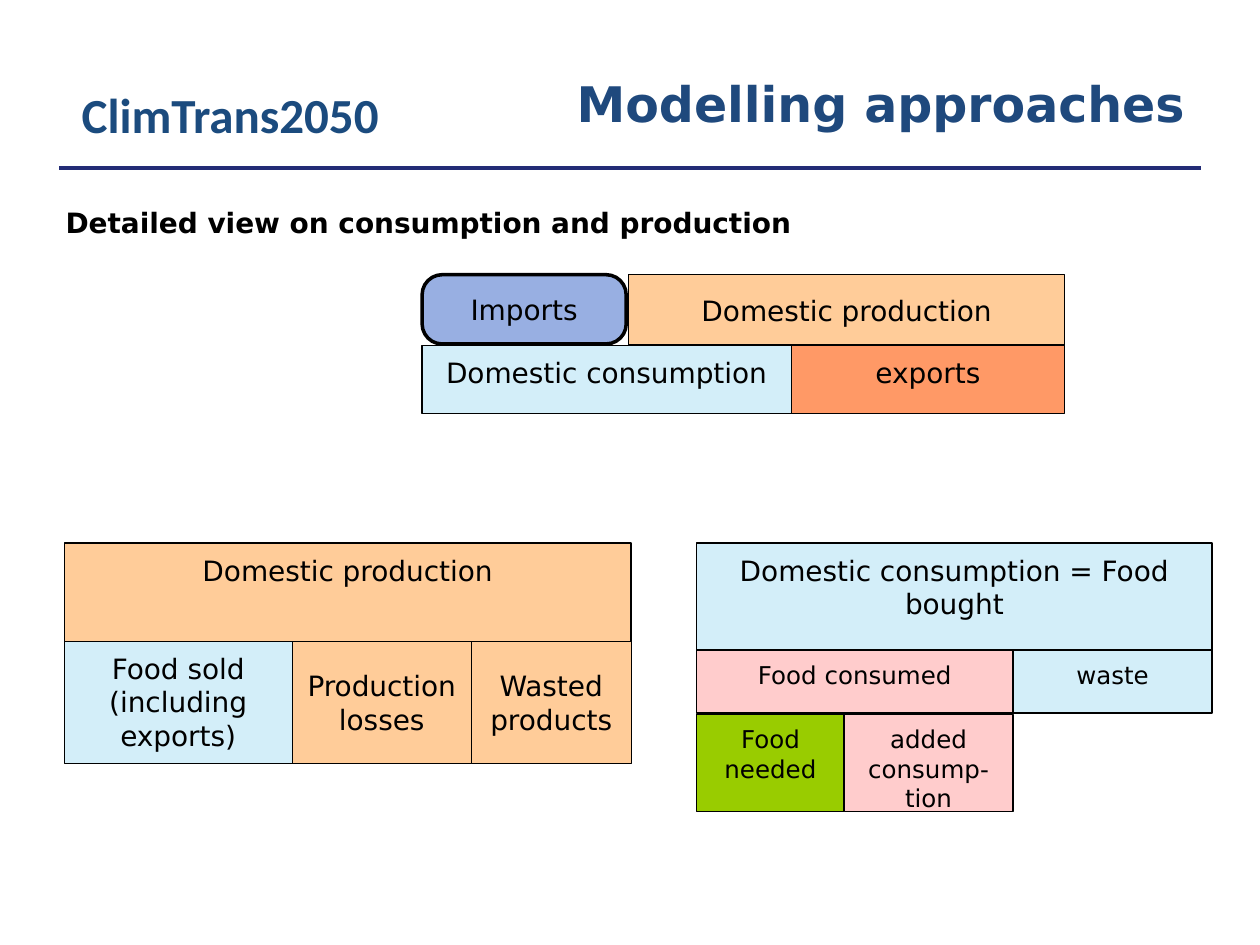
from lxml.etree import SubElement
from pptx import Presentation
from pptx.dml.color import RGBColor
from pptx.enum.shapes import MSO_CONNECTOR, MSO_SHAPE
from pptx.enum.text import MSO_ANCHOR, MSO_AUTO_SIZE, PP_ALIGN
from pptx.oxml.ns import qn
from pptx.util import Inches, Pt

SANS = "DejaVu Sans"
BLUE, PEACH, PINK = "D3EEF9", "FFCC99", "FFCCCC"
TOP, MID = MSO_ANCHOR.TOP, MSO_ANCHOR.MIDDLE


def color(code):
    """Turn a hex string into a colour."""
    return RGBColor.from_string(code)


def place(shape, left, top, width, height):
    """Move and size a shape, in inches."""
    shape.left, shape.top = Inches(left), Inches(top)
    shape.width, shape.height = Inches(width), Inches(height)


def write(shape, text, size, ink="000000", bold=False, face=SANS, align=None):
    """Set one formatted paragraph and return it."""
    shape.text_frame.text = text
    para = shape.text_frame.paragraphs[0]
    para.alignment = align
    font = para.runs[0].font
    font.name, font.size, font.bold = face, Pt(size), bold
    font.color.rgb = color(ink)
    return para


def block(shapes, text, box, fill, size=16, anchor=TOP, kind=MSO_SHAPE.RECTANGLE):
    """Add a filled, outlined block with centred text."""
    shape = shapes.add_shape(kind, *map(Inches, box))
    shape.shadow.inherit = False
    shape.fill.solid()
    shape.fill.fore_color.rgb = color(fill)
    shape.line.color.rgb = color("000000")
    shape.line.width = Pt(0.75)
    frame = shape.text_frame
    frame.word_wrap, frame.vertical_anchor = True, anchor
    frame.margin_left = frame.margin_right = Inches(0.1)
    frame.margin_top = frame.margin_bottom = Inches(0.08)
    write(shape, text, size, align=PP_ALIGN.CENTER).space_after = Pt(10)
    return shape


def row(shapes, left, top, height, cells, size=16):
    """Lay blocks side by side from (text, width, fill, anchor) cells."""
    for text, width, fill, anchor in cells:
        block(shapes, text, (left, top, width, height), fill, size, anchor)
        left += width


def header(slide, left, top, width):
    """Place the title, the project name and the rule beneath them."""
    rule = slide.shapes.add_connector(
        MSO_CONNECTOR.STRAIGHT, *map(Inches, (left, top, left + width, top)))
    rule.line.color.rgb = color("232C76")
    rule.line.width = Pt(2.25)
    SubElement(rule._element.spPr, qn("a:effectLst"))
    name = slide.shapes.add_textbox(*map(Inches, (left + 0.08, top - 0.71, 2.89, 0.57)))
    name.text_frame.word_wrap = True
    name.text_frame.auto_size = MSO_AUTO_SIZE.SHAPE_TO_FIT_TEXT
    write(name, "ClimTrans2050", 28, "1B4B7E", True, "Calibri")
    title = slide.shapes.title
    place(title, left + 1.4, top - 1.03, 7.63, 1.03)
    title.text_frame.vertical_anchor = MID
    write(title, "Modelling approaches", 28, "1F497D", True, align=PP_ALIGN.RIGHT)


def intro(slide, left, top, width, height):
    """Fill the body placeholder with the subheading."""
    body = slide.placeholders[1]
    place(body, left, top, width, height)
    para = write(body, "Detailed view on consumption and production", 16, bold=True)
    para.line_spacing, para.space_before, para.space_after = 1.2, Pt(0), Pt(3)
    props = para._p.get_or_add_pPr()
    props.set("marL", "0")
    props.set("indent", "0")
    SubElement(props, qn("a:buNone"))


def supply(slide, left, top):
    """Draw the balance of imports, production, consumption and exports."""
    shapes = slide.shapes
    row(shapes, left, top + 0.56, 0.54, [
        ("Domestic consumption", 2.93, BLUE, TOP), ("exports", 2.17, "FF9966", TOP)])
    block(shapes, "Domestic production", (left + 1.64, top, 3.46, 0.56), PEACH, anchor=MID)
    trade = block(shapes, "Imports", (left, top, 1.62, 0.55), "98AFE2",
                  anchor=MID, kind=MSO_SHAPE.ROUNDED_RECTANGLE)
    trade.adjustments[0] = 0.29
    trade.line.width = Pt(2)
    trade.text_frame.word_wrap = False
    trade.text_frame.paragraphs[0].space_after = Pt(0)


def output(slide, left, top):
    """Draw the split of domestic production."""
    row(slide.shapes, left, top, 0.78, [("Domestic production", 4.5, PEACH, TOP)])
    row(slide.shapes, left, top + 0.78, 0.97, [
        ("Food sold (including exports)", 1.81, BLUE, TOP),
        ("Production losses", 1.42, PEACH, MID),
        ("Wasted products", 1.27, PEACH, MID)])


def demand(slide, left, top):
    """Draw the grouped split of domestic consumption."""
    shapes = slide.shapes.add_group_shape().shapes
    row(shapes, left, top, 0.85, [("Domestic consumption = Food bought", 4.09, BLUE, TOP)])
    row(shapes, left, top + 0.85, 0.5, [
        ("Food consumed", 2.51, PINK, TOP), ("waste", 1.58, BLUE, TOP)], 14)
    row(shapes, left, top + 1.36, 0.77, [
        ("Food needed", 1.17, "99CC00", TOP), ("added consump-tion", 1.34, PINK, TOP)], 14)


def main():
    """Build and save the slide."""
    deck = Presentation()
    deck.slide_width, deck.slide_height = Inches(10), Inches(7.5)
    slide = deck.slides.add_slide(deck.slide_layouts[1])
    header(slide, 0.47, 1.33, 9.06)
    intro(slide, 0.42, 1.53, 8.28, 1.09)
    supply(slide, 3.35, 2.18)
    output(slide, 0.51, 4.31)
    demand(slide, 5.53, 4.31)
    deck.save("out.pptx")


if __name__ == "__main__":
    main()
